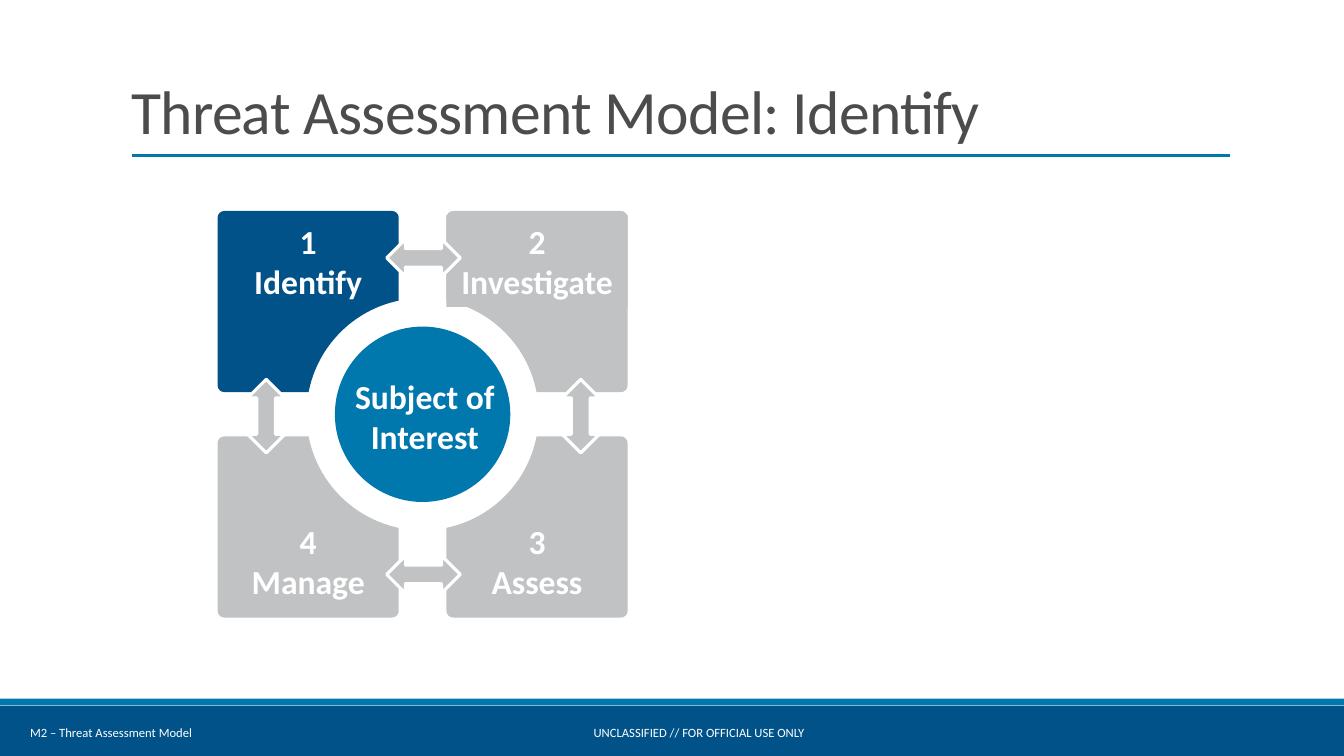
from math import acos, asin, cos, sin, sqrt, tan

from lxml.etree import SubElement
from pptx import Presentation
from pptx.dml.color import RGBColor
from pptx.enum.shapes import MSO_CONNECTOR, MSO_SHAPE
from pptx.enum.text import MSO_ANCHOR, PP_ALIGN
from pptx.oxml.ns import qn
from pptx.oxml.xmlchemy import OxmlElement
from pptx.util import Inches, Pt

# Square grid: 160 columns by 90 rows
COLS, ROWS = 160, 90
WIDTH, HEIGHT = Inches(13.33), Inches(7.5)
CELL = HEIGHT / ROWS

NAVY, BLUE, GREY, WHITE, INK = "005288", "0078AE", "C0C2C4", "FFFFFF", "4C4C4C"
FONT = "Calibri"

# Model geometry, in cells from its centre
MODEL_X, MODEL_Y = 50.3, 49.32
INNER_X, INNER_Y = 2.84, 2.64
OUTER_X, OUTER_Y = 24.4, 24.2
RING, DISC, CORNER = 13.82, 10.44, 0.8


def cells(*values):
    return [round(v * CELL) for v in values]


def color(value):
    return RGBColor.from_string(value)


def paint(sp, fill, line=None):
    sp.shadow.inherit = False
    sp.fill.solid()
    sp.fill.fore_color.rgb = color(fill)
    if line:
        sp.line.color.rgb = color(line)
        sp.line.width = Pt(2.25)
    else:
        sp.line.fill.background()


def add_shape(s, kind, box, fill, line=None):
    sp = s.shapes.add_shape(kind, *cells(*box))
    paint(sp, fill, line)
    return sp


def style(p, size, ink, bold=False, align=PP_ALIGN.LEFT):
    p.alignment = align
    p.font.name = FONT
    p.font.size = Pt(size)
    p.font.bold = bold
    p.font.color.rgb = color(ink)


def add_text(s, box, lines, size, wrap=True, **look):
    sp = s.shapes.add_textbox(*cells(*box))
    tf = sp.text_frame
    tf.word_wrap = wrap
    tf.vertical_anchor = MSO_ANCHOR.MIDDLE
    tf.text = "\n".join(lines)
    for p in tf.paragraphs:
        style(p, size, WHITE, **look)
    return sp


def add_title(s, text):
    sp = s.shapes.title
    sp.left, sp.top, sp.width, sp.height = cells(14.4, 3.72, 132, 14.4)
    tf = sp.text_frame
    tf.vertical_anchor = MSO_ANCHOR.BOTTOM
    tf.text = text
    p = tf.paragraphs[0]
    p.line_spacing = 0.85
    style(p, 44, INK)
    p.runs[0].font._element.set("spc", "-50")


def add_rule(s, x1, x2, y):
    ln = s.shapes.add_connector(MSO_CONNECTOR.STRAIGHT, *cells(x1, y, x2, y))
    ln.line.color.rgb = color(BLUE)
    ln.line.width = Pt(2.25)
    SubElement(ln._element.spPr, qn("a:effectLst"))


def ring_curve():
    """Bezier points along the ring, from the side to the top of a quadrant."""
    a, b = asin(INNER_Y / RING), acos(INNER_X / RING)
    k = 4 / 3 * tan((b - a) / 4) * RING
    return [(RING * cos(a) - k * sin(a), RING * sin(a) + k * cos(a)),
            (RING * cos(b) + k * sin(b), RING * sin(b) - k * cos(b)),
            (RING * cos(b), RING * sin(b))]


def corner_curve(start, corner, end):
    """Bezier points rounding a corner between two points."""
    handles = [tuple(p + 0.55 * (c - p) for p, c in zip(point, corner))
               for point in (start, end)]
    return handles + [end]


def add_panel(s, side_x, side_y, fill):
    """Rounded square with the ring cut from its inner corner."""
    left, right = INNER_X + CORNER, OUTER_X - CORNER
    near, far = INNER_Y + CORNER, OUTER_Y - CORNER
    segments = [ring_curve()]
    for start, corner, end in [
            ((INNER_X, far), (INNER_X, OUTER_Y), (left, OUTER_Y)),
            ((right, OUTER_Y), (OUTER_X, OUTER_Y), (OUTER_X, far)),
            ((OUTER_X, near), (OUTER_X, INNER_Y), (right, INNER_Y))]:
        segments += [[start], corner_curve(start, corner, end)]
    outline = [(sqrt(RING ** 2 - INNER_Y ** 2), INNER_Y)] + sum(segments, [])
    points = [tuple(cells(MODEL_X + side_x * x, MODEL_Y + side_y * y))
              for x, y in outline]
    builder = s.shapes.build_freeform(*points[0])
    builder.add_line_segments(points[1:], close=True)
    sp = builder.convert_to_shape()

    # Turn each run of three points into one curve
    steps = iter(list(sp._element.iter(qn("a:lnTo"))))
    for segment in segments:
        group = [next(steps) for _ in segment]
        if len(group) == 3:
            curve = OxmlElement("a:cubicBezTo")
            group[0].addprevious(curve)
            for step in group:
                curve.append(step[0])
                step.getparent().remove(step)
    paint(sp, fill)


def add_label(s, side_x, side_y, lines):
    w, h = OUTER_X - INNER_X, 10.92
    x = MODEL_X + side_x * (INNER_X + OUTER_X) / 2
    y = 48.94 + side_y * 17.86
    return add_text(s, (x - w / 2, y - h / 2, w, h), lines, 24,
                    bold=True, align=PP_ALIGN.CENTER)


def add_arrow(s, side_x, side_y):
    w, h = 8.76, 4.44
    x, y = 50.4 + side_x * 18.72, 49.54 + side_y * 18.84
    sp = add_shape(s, MSO_SHAPE.LEFT_RIGHT_ARROW,
                   (x - w / 2, y - h / 2, w, h), GREY, WHITE)
    sp.rotation = 90 if side_x else 180


def main():
    prs = Presentation()
    prs.slide_width, prs.slide_height = WIDTH, HEIGHT
    s = prs.slides.add_slide(prs.slide_layouts[5])

    # Title and footer
    add_shape(s, MSO_SHAPE.RECTANGLE, (0, 84, COLS, 6), NAVY)
    add_shape(s, MSO_SHAPE.RECTANGLE, (0, 83.16, COLS, 0.8), BLUE)
    add_text(s, (69.48, 85.68, 28.08, 3),
             ["UNCLASSIFIED // FOR OFFICIAL USE ONLY"], 9, wrap=False)
    add_rule(s, 15.72, 146.45, 18.48)
    add_title(s, "Threat Assessment Model: Identify")
    add_text(s, (2.4, 84.8, 63.24, 4.8), ["M2 – Threat Assessment Model"], 9)

    # Four stages around the subject
    stages = [(-1, -1, "Identify", NAVY), (1, -1, "Investigate", GREY),
              (1, 1, "Assess", GREY), (-1, 1, "Manage", GREY)]
    for number, (side_x, side_y, name, fill) in enumerate(stages, 1):
        add_panel(s, side_x, side_y, fill)
        label = add_label(s, side_x, side_y, [str(number), name])
        if name == "Investigate":
            paint(label, fill)

    # Subject disc
    add_shape(s, MSO_SHAPE.OVAL,
              (MODEL_X - DISC, MODEL_Y - DISC, 2 * DISC, 2 * DISC), BLUE)
    add_text(s, (39.76, 44.08, 21.6, 10.92), ["Subject of Interest"], 24,
             bold=True, align=PP_ALIGN.CENTER)

    # Arrows between stages
    for side in [(0, -1), (1, 0), (0, 1), (-1, 0)]:
        add_arrow(s, *side)

    prs.save("out.pptx")


if __name__ == "__main__":
    main()
